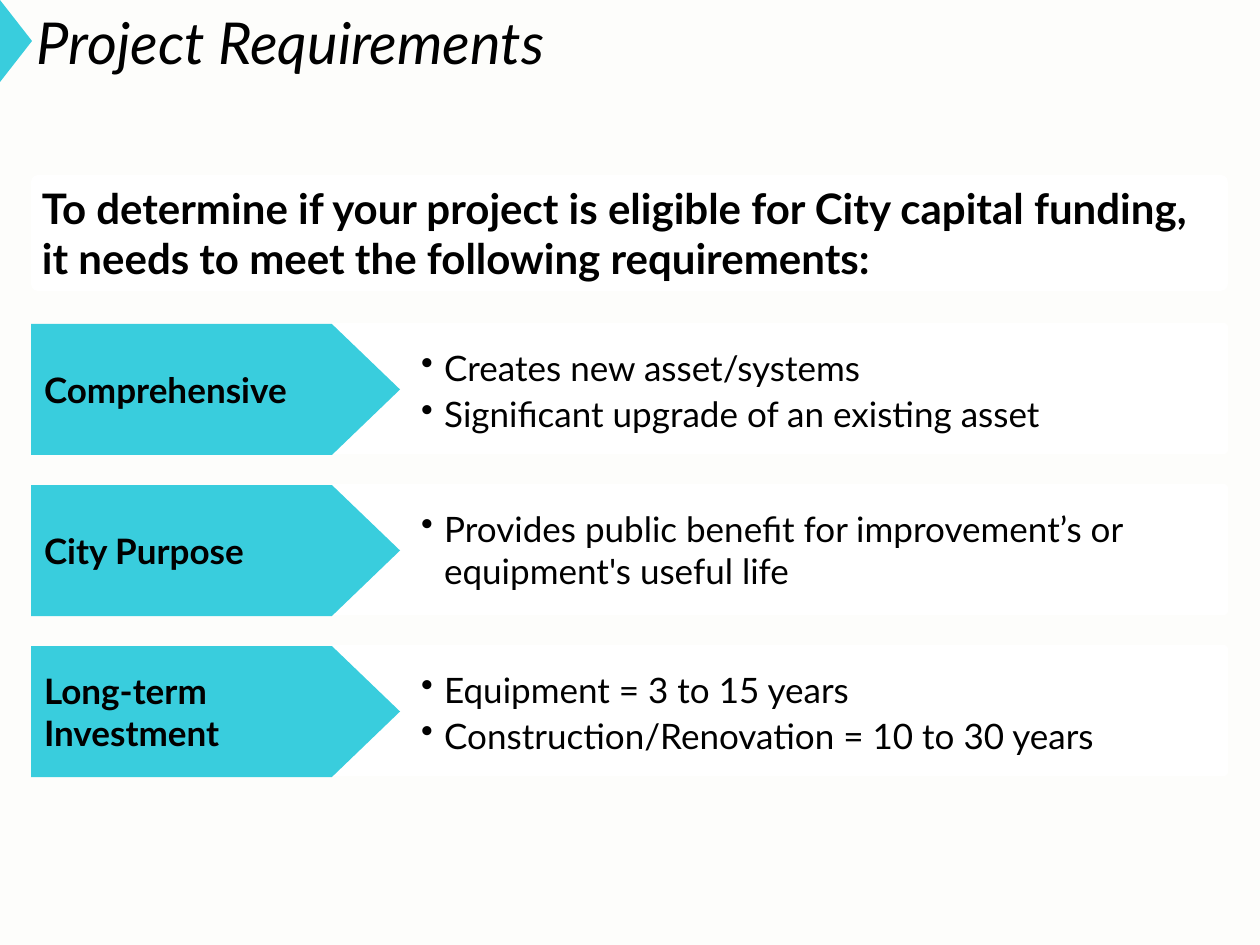
from lxml.etree import SubElement
from pptx import Presentation
from pptx.dml.color import RGBColor as RGB
from pptx.enum.shapes import MSO_SHAPE as SHAPE
from pptx.enum.text import MSO_ANCHOR as ANCHOR, PP_ALIGN as ALIGN
from pptx.oxml.ns import qn
from pptx.util import Emu, Pt

PX = 914400 / 126
COLORS = {"page": "FDFDFB", "card": "FFFFFF", "accent": "39CDDD", "text": "000000"}
INSETS = {"card": (9, 5), "label": (13, 6)}
LABEL = {"size": Pt(20), "bold": True}
BODY = {"size": Pt(20)}
REQUIREMENTS = [
    (["Comprehensive"],
     ["Creates new asset/systems", "Significant upgrade of an existing asset"], 1.1),
    (["City Purpose"],
     ["Provides public benefit for improvement’s or equipment's useful life"], None),
    (["Long-term", "Investment"],
     ["Equipment = 3 to 15 years", "Construction/Renovation = 10 to 30 years"], 1.1),
]


def px(n):
    return Emu(round(n * PX))


def color(name):
    return RGB.from_string(COLORS[name])


def add_shape(s, kind, box, fill, adj=None):
    sp = s.shapes.add_shape(kind, *map(px, box))
    sp.shadow.inherit = False
    sp.fill.solid()
    sp.fill.fore_color.rgb = color(fill)
    sp.line.fill.background()
    if adj is not None:
        sp.adjustments[0] = adj
    return sp


def set_bullet(p, margin, hang):
    pPr = p._p.get_or_add_pPr()
    pPr.set("marL", str(px(margin)))
    pPr.set("indent", str(px(-hang)))
    clr = SubElement(pPr, qn("a:buClr"))
    SubElement(clr, qn("a:srgbClr"), val=COLORS["text"])
    SubElement(pPr, qn("a:buChar"), char="•")


def write(sp, lines, font, insets, bullets=False, spacing=None):
    tf = sp.text_frame
    dx, dy = insets
    frame = {"word_wrap": True, "vertical_anchor": ANCHOR.MIDDLE,
             "margin_left": px(dx), "margin_right": px(dx),
             "margin_top": px(dy), "margin_bottom": px(dy)}
    for key, value in frame.items():
        setattr(tf, key, value)
    for i, line in enumerate(lines):
        p = tf.add_paragraph() if i else tf.paragraphs[0]
        p.alignment = ALIGN.LEFT
        if bullets:
            set_bullet(p, 106, 23)
        if spacing:
            p.line_spacing = spacing
        r = p.add_run()
        r.text = line
        for key, value in {"name": "Lato", **font}.items():
            setattr(r.font, key, value)
        r.font.color.rgb = color("text")


def add_title(s, x, y, w, h):
    sp = s.shapes.add_textbox(*map(px, (x, y, w, h)))
    write(sp, ["Project Requirements"], {"size": Pt(33), "italic": True}, (37, 6))
    # The marker is a triangle turned about its centre to point right.
    depth = 32
    marker = add_shape(s, SHAPE.FLOWCHART_EXTRACT,
                       (x + (depth - h) / 2, y + (h - depth) / 2, h, depth), "accent")
    marker.rotation = 90


def add_intro(s, x, y, w, h):
    sp = add_shape(s, SHAPE.ROUNDED_RECTANGLE, (x, y, w, h), "card", 0.06)
    write(sp, ["To determine if your project is eligible for City capital funding, "
               "it needs to meet the following requirements:"],
          {"size": Pt(24), "bold": True}, INSETS["card"])


def add_requirement(s, x, y, w, h, label, points, spacing):
    card_x = 297
    card = add_shape(s, SHAPE.ROUNDED_RECTANGLE,
                     (x + card_x, y, w - card_x, h), "card", 0.03)
    write(card, points, BODY, INSETS["card"], bullets=True, spacing=spacing)
    arrow = add_shape(s, SHAPE.PENTAGON, (x, y + 1, 369, h), "accent", 0.52)
    write(arrow, label, LABEL, INSETS["label"])


def main():
    prs = Presentation()
    prs.slide_width, prs.slide_height = px(1260), px(945)
    s = prs.slides.add_slide(prs.slide_layouts[6])
    s.background.fill.solid()
    s.background.fill.fore_color.rgb = color("page")
    add_title(s, 0, 0, 1260, 82)
    left, width = 31, 1197
    add_intro(s, left, 175, width, 116)
    for i, requirement in enumerate(REQUIREMENTS):
        add_requirement(s, left, 323 + 161 * i, width, 131, *requirement)
    prs.save("out.pptx")


if __name__ == "__main__":
    main()
